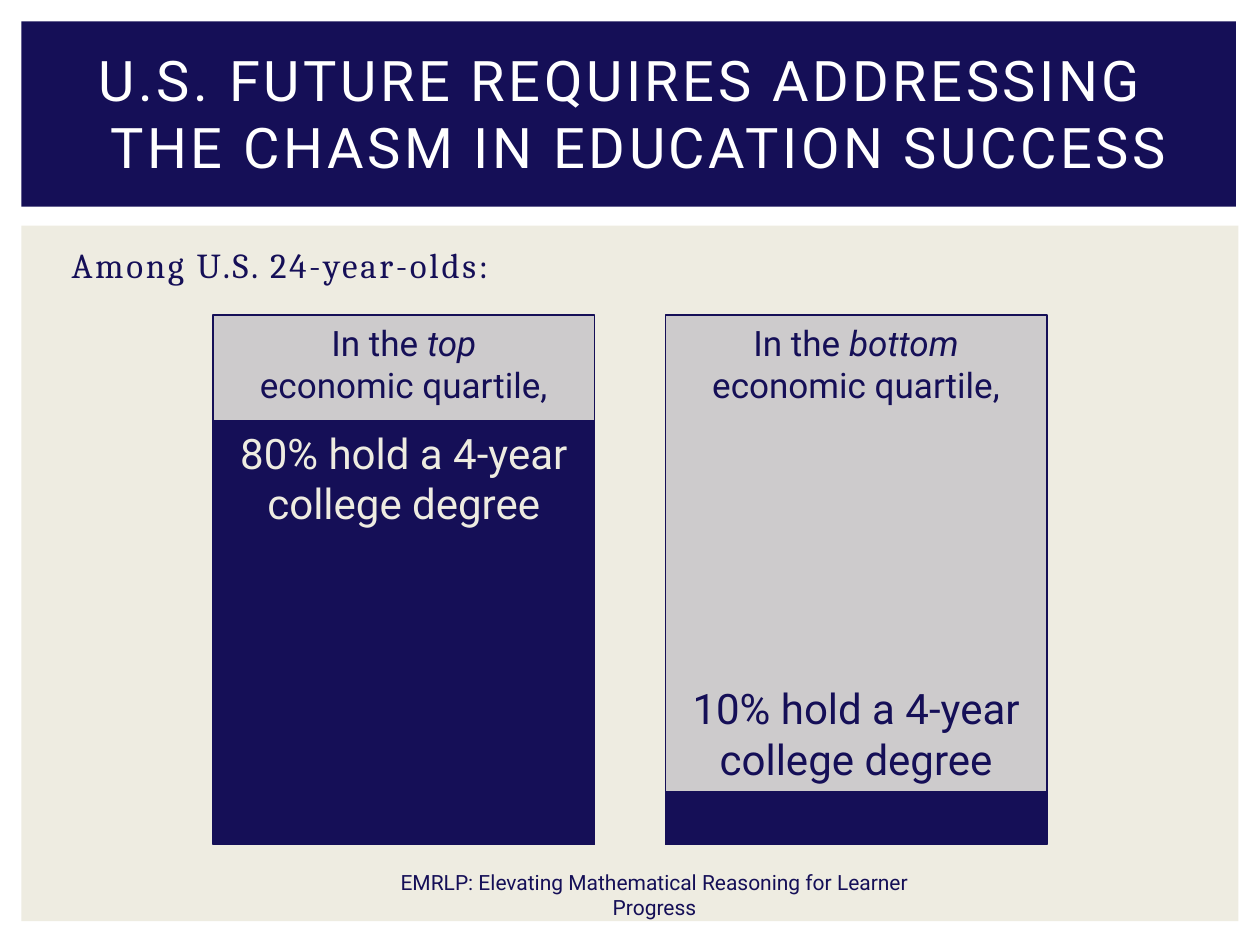
from dataclasses import dataclass

import pptx
import pptx.dml.color
import pptx.enum.shapes
import pptx.enum.text
import pptx.oxml
import pptx.oxml.ns
import pptx.util
from pptx.util import Inches, Pt

NAVY, CREAM, WHITE = "150F57", "EEECE1", "FFFFFF"
SANS, SERIF = "Roboto", "Cambria"
BAR_TOP, BAR_WIDTH, BAR_HEIGHT = 2.5, 3.03, 4.2
LABEL_HEIGHT = 0.91
CENTER = pptx.enum.text.PP_ALIGN.CENTER
MIDDLE = pptx.enum.text.MSO_ANCHOR.MIDDLE


@dataclass
class Quartile:
    name: str
    left: float
    percent: int
    label_inside: bool


QUARTILES = [
    Quartile("top", 1.69, 80, True),
    Quartile("bottom", 5.28, 10, False),
]


def rgb(color: str) -> pptx.dml.color.RGBColor:
    return pptx.dml.color.RGBColor.from_string(color)


def style(p, size: float, color: str, font: str = SANS, align=CENTER) -> None:
    p.font.size = Pt(size)
    p.font.name = font
    p.font.color.rgb = rgb(color)
    p.alignment = align


def space_letters(sp, points: float) -> None:
    for props in sp.element.iter(pptx.oxml.ns.qn("a:defRPr")):
        props.set("spc", str(round(points * 100)))


def add_rect(s, left: float, top: float, width: float, height: float,
             fill: str, line: str | None = None, opacity: int = 100):
    sp = s.shapes.add_shape(pptx.enum.shapes.MSO_SHAPE.RECTANGLE, Inches(left),
                            Inches(top), Inches(width), Inches(height))
    sp.shadow.inherit = False
    sp.fill.solid()
    sp.fill.fore_color.rgb = rgb(fill)
    if opacity < 100:
        color = sp.element.spPr.find(".//" + pptx.oxml.ns.qn("a:srgbClr"))
        alpha = pptx.oxml.parse_xml(
            f'<a:alpha {pptx.oxml.ns.nsdecls("a")} val="{opacity * 1000}"/>')
        color.append(alpha)
    if line:
        sp.line.color.rgb = rgb(line)
        sp.line.width = Pt(0.79)
    else:
        sp.line.fill.background()
    sp.text_frame.vertical_anchor = pptx.enum.text.MSO_ANCHOR.TOP
    return sp


def add_text(s, left: float, top: float, width: float, height: float, text: str):
    sp = s.shapes.add_textbox(Inches(left), Inches(top), Inches(width), Inches(height))
    sp.text_frame.word_wrap = True
    sp.text_frame.text = text
    return sp


def add_title(s) -> None:
    sp = s.shapes.title
    sp.left, sp.top, sp.width, sp.height = map(Inches, (0.42, 0.32, 9.17, 1.15))
    tf = sp.text_frame
    tf.vertical_anchor = MIDDLE
    p = tf.paragraphs[0]
    p.add_run().text = "U.S. FUTURE REQUIRES ADDRESSING "
    p.add_line_break()
    p.add_run().text = " THE CHASM IN EDUCATION SUCCESS"
    style(p, 32, WHITE)
    space_letters(sp, 2)
    # Bring the title in front of its band
    sp.element.getparent().append(sp.element)


def add_quartile(s, q: Quartile) -> None:
    """Draw a pale full-height bar, its filled share and both labels."""
    whole = add_rect(s, q.left, BAR_TOP, BAR_WIDTH, BAR_HEIGHT, NAVY, NAVY, 15)
    tf = whole.text_frame
    p = tf.paragraphs[0]
    p.add_run().text = "In the "
    r = p.add_run()
    r.text = q.name
    r.font.italic = True
    tf.add_paragraph().text = "economic quartile,"
    for p in tf.paragraphs:
        style(p, 20, NAVY)

    height = BAR_HEIGHT * q.percent / 100
    top = BAR_TOP + BAR_HEIGHT - height
    share = add_rect(s, q.left, top, BAR_WIDTH, height, NAVY, NAVY)
    label = f"{q.percent}% hold a 4-year college degree"
    if q.label_inside:
        share.text_frame.text = label
        style(share.text_frame.paragraphs[0], 24, CREAM)
    else:
        sp = add_text(s, q.left, top - LABEL_HEIGHT, BAR_WIDTH, LABEL_HEIGHT, label)
        style(sp.text_frame.paragraphs[0], 24, NAVY)


def main() -> None:
    prs = pptx.Presentation()
    prs.slide_width, prs.slide_height = Inches(10), Inches(7.5)
    s = prs.slides.add_slide(prs.slide_layouts.get_by_name("Title Only"))

    add_rect(s, 0.17, 1.79, 9.66, 5.52, CREAM)
    add_rect(s, 0.17, 0.17, 9.64, 1.47, NAVY)
    add_title(s)

    intro = add_text(s, 0.47, 1.88, 9.14, 0.5, "Among U.S. 24-year-olds:")
    p = intro.text_frame.paragraphs[0]
    style(p, 20, NAVY, SERIF, pptx.enum.text.PP_ALIGN.LEFT)
    p.space_before = Pt(4)
    space_letters(intro, 1.5)

    footer = add_text(s, 2.74, 6.95, 4.91, 0.3,
                      "EMRLP: Elevating Mathematical Reasoning for Learner Progress")
    footer.text_frame.vertical_anchor = MIDDLE
    style(footer.text_frame.paragraphs[0], 12, NAVY)

    for q in QUARTILES:
        add_quartile(s, q)
    prs.save("out.pptx")


if __name__ == "__main__":
    main()
